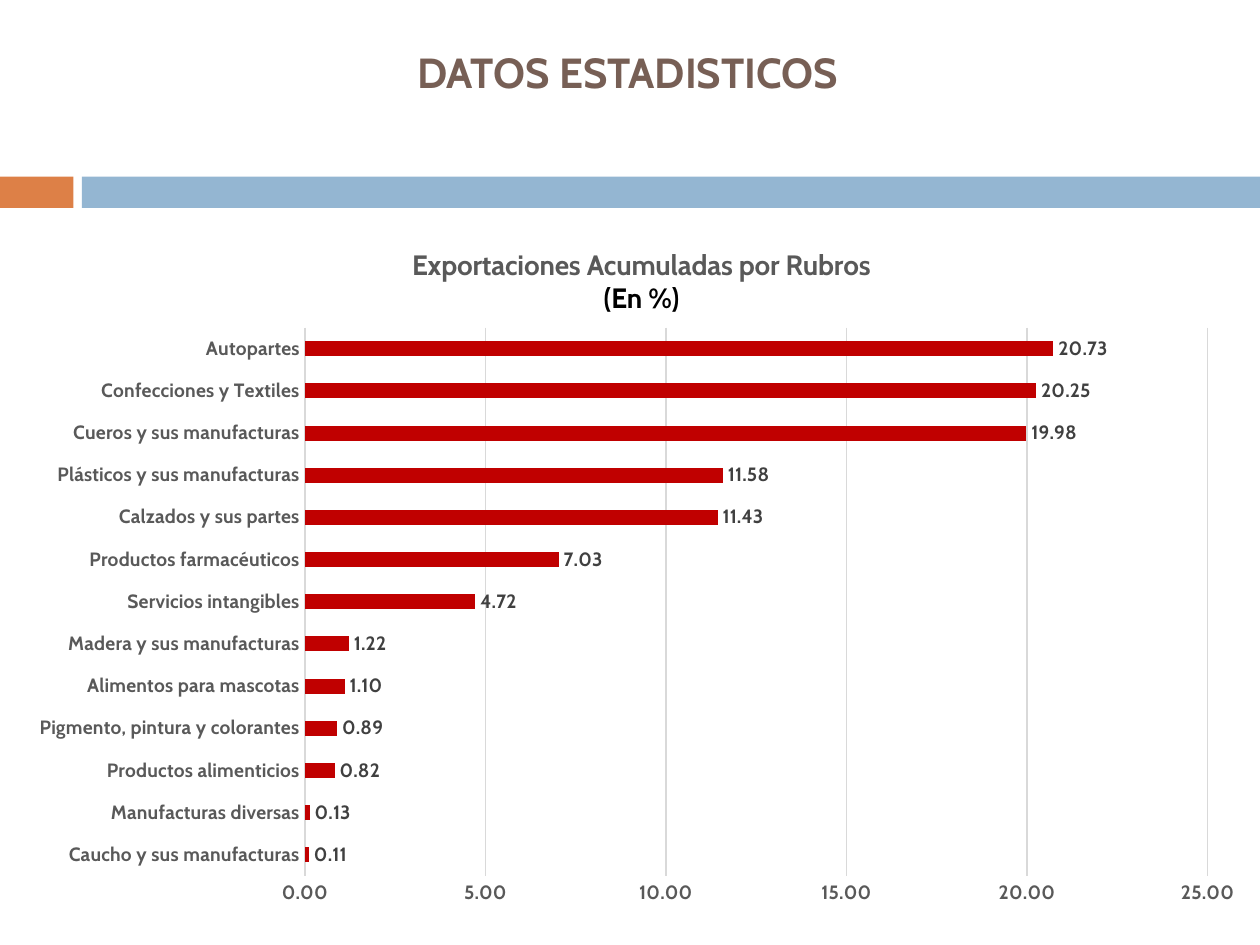
import pptx
import pptx.chart.data
import pptx.dml.color
import pptx.enum.chart
import pptx.enum.shapes
import pptx.enum.text
import pptx.oxml
import pptx.oxml.ns
import pptx.util

Cm = pptx.util.Cm
Pt = pptx.util.Pt
FONT = "Cabin"
COLORS = {
    "orange": "DD8047", "blue": "94B6D2", "brown": "775F55", "red": "C00000",
    "gray": "595959", "dark": "404040", "grid": "D9D9D9", "black": "000000",
}
RUBROS = [
    ("Caucho y sus manufacturas", 0.11),
    ("Manufacturas diversas", 0.13),
    ("Productos alimenticios", 0.82),
    ("Pigmento, pintura y colorantes", 0.89),
    ("Alimentos para mascotas", 1.1),
    ("Madera y sus manufacturas", 1.22),
    ("Servicios intangibles", 4.72),
    ("Productos farmacéuticos", 7.03),
    ("Calzados y sus partes", 11.43),
    ("Plásticos y sus manufacturas", 11.58),
    ("Cueros y sus manufacturas", 19.98),
    ("Confecciones y Textiles", 20.25),
    ("Autopartes", 20.73),
]


def tint(name):
    return pptx.dml.color.RGBColor.from_string(COLORS[name])


def style(font, size, color, bold=True):
    font.name, font.size, font.bold = FONT, Pt(size), bold
    font.color.rgb = tint(color)


def write(para, text, size=16, color="black", bold=True):
    run = para.add_run()
    run.text = text
    para.alignment = pptx.enum.text.PP_ALIGN.CENTER
    style(run.font, size, color, bold)


def place(node, index, **parts):
    """Give a chart part a manual layout, in fractions of the chart."""
    qn = pptx.oxml.ns.qn
    for old in node.findall(qn("c:layout")):
        node.remove(old)
    modes = "".join(f'<c:{k}Mode val="edge"/>' for k in "xy")
    spots = "".join(f'<c:{k} val="{v}"/>' for k, v in parts.items())
    target = '<c:layoutTarget val="inner"/>' if "w" in parts else ""
    node.insert(index, pptx.oxml.parse_xml(
        f'<c:layout {pptx.oxml.ns.nsdecls("c")}><c:manualLayout>'
        f"{target}{modes}{spots}</c:manualLayout></c:layout>"))


class Deck:
    def __init__(self):
        self.show = pptx.Presentation()
        self.show.slide_width, self.show.slide_height = Cm(25.4), Cm(19.05)
        self.slide = self.show.slides.add_slide(self.show.slide_layouts[5])

    def title(self, text, *box):
        head = self.slide.shapes.title
        head.left, head.top, head.width, head.height = map(Cm, box)
        frame = head.text_frame
        frame.vertical_anchor = pptx.enum.text.MSO_ANCHOR.MIDDLE
        write(frame.paragraphs[0], text, size=24, color="brown")

    def band(self, color, *box):
        rect = self.slide.shapes.add_shape(
            pptx.enum.shapes.MSO_SHAPE.RECTANGLE, *map(Cm, box))
        rect.shadow.inherit = False
        rect.fill.solid()
        rect.fill.fore_color.rgb = tint(color)
        rect.line.fill.background()

    def bars(self, rows, lines, *box):
        kinds = pptx.enum.chart
        data = pptx.chart.data.CategoryChartData(number_format="#,##0.00")
        data.categories = [name for name, _ in rows]
        data.add_series("Series 1", [value for _, value in rows])
        chart = self.slide.shapes.add_chart(
            kinds.XL_CHART_TYPE.BAR_CLUSTERED, *map(Cm, box), data).chart
        style(chart.font, 10, "black", bold=False)
        chart.has_legend = False

        # Chart title
        chart.has_title = True
        frame = chart.chart_title.text_frame
        for i, (text, color) in enumerate(lines):
            para = frame.add_paragraph() if i else frame.paragraphs[0]
            write(para, text, color=color)
        place(chart.chart_title._element, 1, x=0.316, y=0.04)
        area = chart._chartSpace.chart.plotArea
        place(area, 0, x=0.233, y=0.16, w=0.725, h=0.78)

        # Axes
        cats, vals = chart.category_axis, chart.value_axis
        for axis in (cats, vals):
            axis.major_tick_mark = kinds.XL_TICK_MARK.NONE
            axis.minor_tick_mark = kinds.XL_TICK_MARK.NONE
            style(axis.tick_labels.font, 11, "gray")
        vals.minimum_scale, vals.maximum_scale, vals.major_unit = 0, 25, 5
        vals.tick_labels.number_format = "#,##0.00"
        vals.tick_labels.number_format_is_linked = False
        vals.format.line.fill.background()
        for line in (cats.format.line, vals.major_gridlines.format.line):
            line.color.rgb = tint("grid")
            line.width = Pt(0.75)

        # Bars and their labels
        plot = chart.plots[0]
        plot.gap_width = 182
        plot.vary_by_categories = False
        fill = plot.series[0].format.fill
        fill.solid()
        fill.fore_color.rgb = tint("red")
        labels = plot.series[0].data_labels
        labels.show_value = True
        labels.position = kinds.XL_LABEL_POSITION.OUTSIDE_END
        labels.number_format = "#,##0.00"
        labels.number_format_is_linked = False
        style(labels.font, 11, "dark")


def main():
    deck = Deck()
    # Header
    deck.band("orange", 0, 3.56, 1.48, 0.63)
    deck.band("blue", 1.65, 3.56, 23.75, 0.63)
    deck.title("DATOS ESTADISTICOS", 1.7, 0.05, 21.9, 2.77)
    # Exports by category
    deck.bars(RUBROS, [("Exportaciones Acumuladas por Rubros", "gray"),
                       ("(En %)", "black")], 0.3, 4.34, 25.1, 14.17)
    deck.show.save("out.pptx")


if __name__ == "__main__":
    main()
